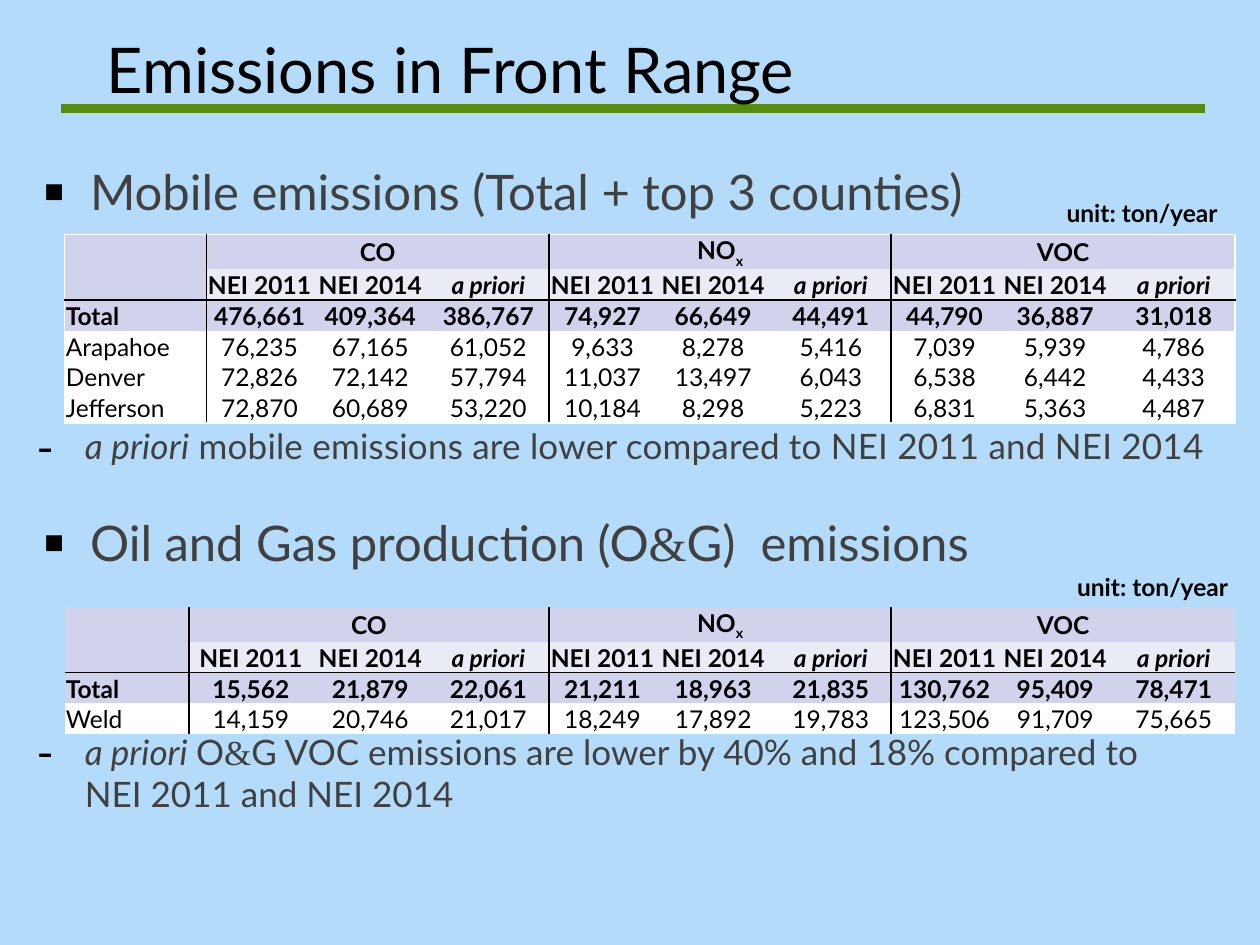
from lxml import etree
from pptx import Presentation
from pptx.dml.color import RGBColor
from pptx.enum.shapes import MSO_CONNECTOR
from pptx.enum.text import MSO_ANCHOR, MSO_AUTO_SIZE, PP_ALIGN
from pptx.oxml.ns import qn
from pptx.util import Pt

CENTER, LEFT = PP_ALIGN.CENTER, PP_ALIGN.LEFT
TOP, MIDDLE, BOTTOM = MSO_ANCHOR.TOP, MSO_ANCHOR.MIDDLE, MSO_ANCHOR.BOTTOM
STRAIGHT = MSO_CONNECTOR.STRAIGHT
FIT_SHAPE = MSO_AUTO_SIZE.SHAPE_TO_FIT_TEXT

SKY = RGBColor(0xB4, 0xDC, 0xFA)
GREEN = RGBColor(0x56, 0x8D, 0x11)
BLACK = RGBColor(0, 0, 0)
GRAY = RGBColor(0x40, 0x40, 0x40)
WHITE = RGBColor(0xFF, 0xFF, 0xFF)
LAVENDER = RGBColor(0xD0, 0xD3, 0xEB)
PALE = RGBColor(0xE9, 0xEB, 0xF5)
FONT, SERIF = "Lato", "Times New Roman"

TITLE = "Emissions in Front Range"
UNIT = "unit: ton/year"
POLLUTANTS = [[("CO", {})], [("NO", {}), ("x", {"sub": True})], [("VOC", {})]]
SOURCES = [("NEI 2011", {}), ("NEI 2014", {}), ("a priori", {"italic": True})]

# bullet, size, left indent, space before, runs
BODY = [
    ("▪", 28, 30, 0, [("Mobile emissions (Total + top 3 counties)", {})]),
    ("-", 20, 27, 117, [
        ("a priori", {"italic": True, "spacing": 0.1}),
        (" mobile emissions are lower compared to NEI 2011 and NEI 2014", {"spacing": 0.1})]),
    ("▪", 28, 30, 26, [
        ("Oil and Gas production (O", {}), ("&", {"font": SERIF}), ("G)  emissions", {})]),
    ("-", 20, 27, 91, [
        ("a priori ", {"italic": True}), ("O", {}), ("&", {"font": SERIF}),
        ("G VOC emissions are lower by 40% and 18% compared to", {}),
        ("\n", {}), ("NEI 2011 and NEI 2014", {})]),
]

SHARED_COLS = [65.5, 69.5, 61, 65.5, 69, 61, 65.5, 70]
TABLES = [
    {"top": 134, "cols": [81, 61] + SHARED_COLS, "edge": WHITE, "unit_at": (599, 109.5), "rows": [
        "Total 476,661 409,364 386,767 74,927 66,649 44,491 44,790 36,887 31,018",
        "Arapahoe 76,235 67,165 61,052 9,633 8,278 5,416 7,039 5,939 4,786",
        "Denver 72,826 72,142 57,794 11,037 13,497 6,043 6,538 6,442 4,433",
        "Jefferson 72,870 60,689 53,220 10,184 8,298 5,223 6,831 5,363 4,487"]},
    {"top": 347, "cols": [71, 71] + SHARED_COLS, "edge": None, "unit_at": (605, 323.3), "rows": [
        "Total 15,562 21,879 22,061 21,211 18,963 21,835 130,762 95,409 78,471",
        "Weld 14,159 20,746 21,017 18,249 17,892 19,783 123,506 91,709 75,665"]},
]
TABLE_LEFT, HEAD_H, ROW_H, CELL_INSET, CELL_SIZE = 36.9, 19.7, 17.6, 0.72, 14


def add_runs(p, runs, size, color, bold=False):
    for text, style in runs:
        if text == "\n":
            p.add_line_break()
            continue
        r = p.add_run()
        r.text = text
        f = r.font
        f.name, f.size, f.bold = style.get("font", FONT), Pt(size), bold
        f.italic = style.get("italic", False)
        f.color.rgb = color
        if style.get("sub"):
            f._element.set("baseline", "-25000")
        if "spacing" in style:
            f._element.set("spc", str(round(style["spacing"] * 100)))


def add_text_box(s, x, y, w, h, wrap=True):
    tf = s.shapes.add_textbox(Pt(x), Pt(y), Pt(w), Pt(h)).text_frame
    tf.word_wrap, tf.vertical_anchor = wrap, TOP
    return tf


def set_bullet(p, char, indent):
    pPr = p._p.get_or_add_pPr()
    pPr.set("marL", str(Pt(indent)))
    pPr.set("indent", str(-Pt(27)))
    color = etree.SubElement(pPr, qn("a:buClr"))
    etree.SubElement(color, qn("a:srgbClr")).set("val", str(BLACK))
    etree.SubElement(pPr, qn("a:buSzPct")).set("val", "130000")
    etree.SubElement(pPr, qn("a:buFont")).set("typeface", SERIF)
    etree.SubElement(pPr, qn("a:buChar")).set("char", char)


def set_borders(cell, colors):
    """Colours go left, right, top, bottom; None hides that side."""
    tcPr = cell._tc.get_or_add_tcPr()
    for side, color in zip("LRTB", colors):
        ln = etree.SubElement(tcPr, qn("a:ln" + side))
        ln.set("w", str(Pt(1)))
        if color is None:
            etree.SubElement(ln, qn("a:noFill"))
        else:
            fill = etree.SubElement(ln, qn("a:solidFill"))
            etree.SubElement(fill, qn("a:srgbClr")).set("val", str(color))


def cell_runs(rows, i, j):
    if i == 0:
        return POLLUTANTS[j // 3] if j % 3 == 1 else []
    if i == 1:
        return [SOURCES[(j - 1) % 3]] if j else []
    return [(rows[i - 2].split()[j], {})]


def fill_cell_text(cell, runs, align, bold):
    p = cell.text_frame.paragraphs[0]
    p.alignment, p.space_before = align, Pt(3)
    add_runs(p, runs, CELL_SIZE, BLACK, bold)
    if not runs:  # an empty cell at the default 18 pt would stretch its row
        etree.SubElement(p._p, qn("a:endParaRPr")).set("sz", str(CELL_SIZE * 100))


def add_emissions_table(s, spec):
    cols, rows, edge = spec["cols"], spec["rows"], spec["edge"]
    heights = [HEAD_H] + [ROW_H] * (len(rows) + 1)
    last_row, last_col = len(heights) - 1, len(cols) - 1
    table = s.shapes.add_table(len(heights), len(cols), Pt(TABLE_LEFT), Pt(spec["top"]),
                               Pt(sum(cols)), Pt(sum(heights))).table
    table.first_row = table.horz_banding = False
    for col, w in zip(table.columns, cols):
        col.width = Pt(w)
    for row, h in zip(table.rows, heights):
        row.height = Pt(h)
    table.cell(0, 0).merge(table.cell(1, 0))
    for j in (1, 4, 7):
        table.cell(0, j).merge(table.cell(0, j + 2))

    for i in range(len(heights)):
        for j in range(len(cols)):
            cell = table.cell(i, j)
            bottom = i + cell.span_height - 1 if cell.is_merge_origin else i
            right = j + cell.span_width - 1 if cell.is_merge_origin else j
            set_borders(cell, [
                edge if j == 0 else BLACK if j in (1, 4, 7) else None,
                edge if right == last_col else BLACK if right in (0, 3, 6) else None,
                edge if i == 0 else BLACK if i == 2 else None,
                edge if bottom == last_row else BLACK if bottom == 1 else None])
            cell.fill.solid()
            cell.fill.fore_color.rgb = (
                LAVENDER if i in (0, 2) or (i == 1 and j == 0) else PALE if i == 1 else WHITE)
            cell.margin_left = cell.margin_right = cell.margin_top = Pt(CELL_INSET)
            cell.margin_bottom = 0
            cell.vertical_anchor = MIDDLE if j else BOTTOM
            fill_cell_text(cell, cell_runs(rows, i, j), CENTER if j else LEFT, i < 3)


def main():
    prs = Presentation()
    prs.slide_width, prs.slide_height = Pt(720), Pt(540)
    s = prs.slides.add_slide(prs.slide_layouts[6])
    s.background.fill.solid()
    s.background.fill.fore_color.rgb = SKY

    rule = s.shapes.add_connector(STRAIGHT, Pt(34.7), Pt(62), Pt(688.5), Pt(62))
    rule.line.color.rgb, rule.line.width = GREEN, Pt(5)
    etree.SubElement(rule._element.spPr, qn("a:effectLst"))

    tf = add_text_box(s, 54, 13.7, 612, 48)
    add_runs(tf.paragraphs[0], [(TITLE, {})], 36, BLACK)

    tf = add_text_box(s, 14.4, 88.6, 697.7, 425)
    for n, (bullet, size, indent, before, runs) in enumerate(BODY):
        p = tf.add_paragraph() if n else tf.paragraphs[0]
        p.space_before, p.space_after = Pt(before), Pt(0)
        set_bullet(p, bullet, indent)
        add_runs(p, runs, size, GRAY)

    for spec in TABLES:
        add_emissions_table(s, spec)
        tf = add_text_box(s, *spec["unit_at"], 107.3, 24.2, wrap=False)
        tf.auto_size = FIT_SHAPE
        p = tf.paragraphs[0]
        p.alignment = CENTER
        add_runs(p, [(UNIT, {})], 14, BLACK, bold=True)

    prs.save("out.pptx")


if __name__ == "__main__":
    main()
